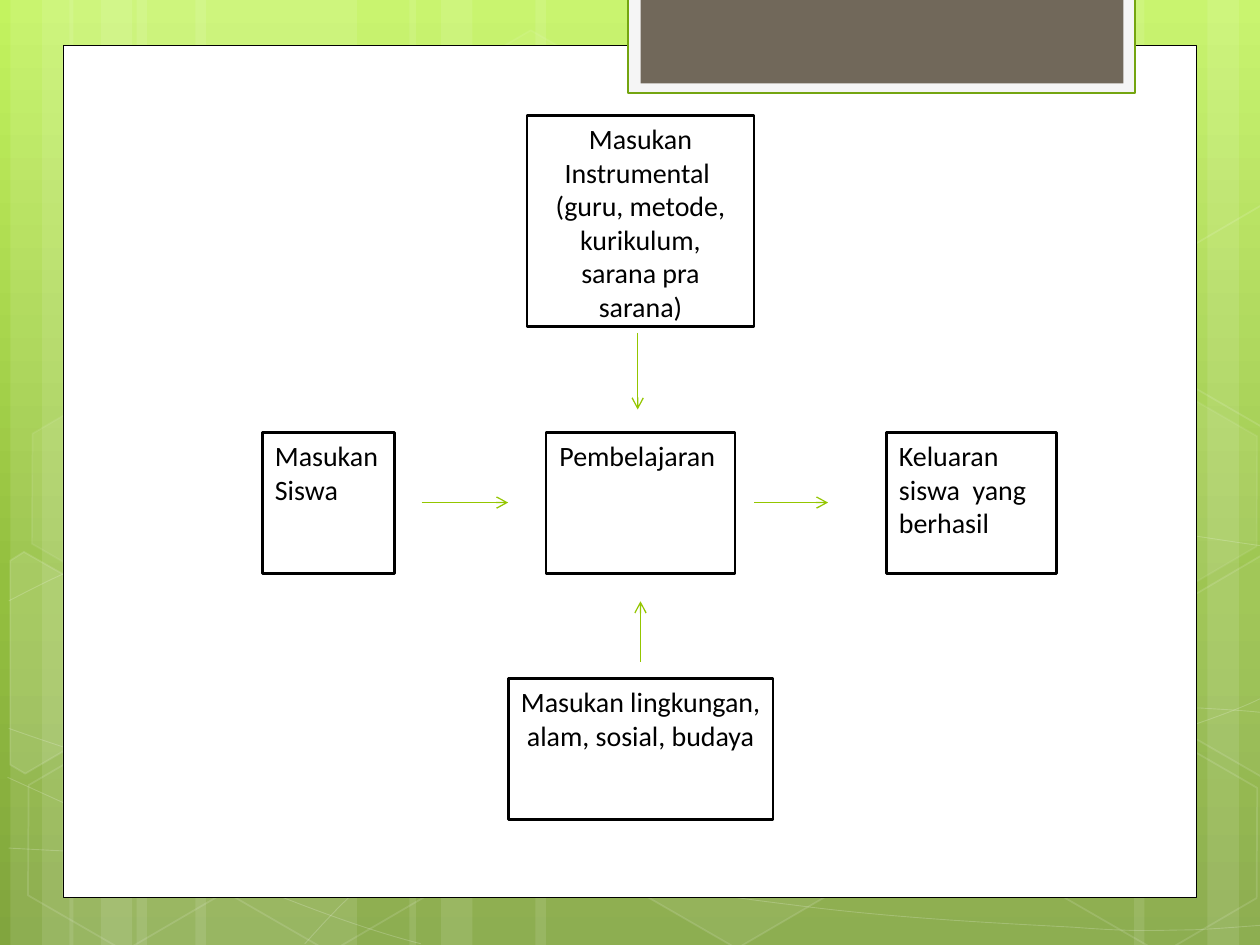
from copy import deepcopy

from pptx import Presentation
from pptx.dml.color import RGBColor
from pptx.enum.shapes import MSO_CONNECTOR, MSO_SHAPE
from pptx.enum.text import MSO_ANCHOR, PP_ALIGN
from pptx.oxml.ns import qn
from pptx.util import Pt

WHITE = RGBColor(0xFF, 0xFF, 0xFF)
BLACK = RGBColor(0x00, 0x00, 0x00)
LIME = RGBColor(0xC3, 0xF3, 0x5F)
LEAF = RGBColor(0x93, 0xBF, 0x3F)
MOSS = RGBColor(0x81, 0xA5, 0x3E)
FRAME_FILL = RGBColor(0xF5, 0xF5, 0xF5)
FRAME_LINE = RGBColor(0x74, 0xA5, 0x10)
BROWN = RGBColor(0x71, 0x68, 0x5A)
ARROW = RGBColor(0x94, 0xC6, 0x00)


def paint(shape, fill=None, line=None, width=1, fill_alpha=100, line_alpha=100):
    """Set fill and outline; the alphas are opacity in percent."""
    shape.shadow.inherit = False
    for part, color, alpha, route in (
        (shape.fill, fill, fill_alpha, "a:solidFill/a:srgbClr"),
        (shape.line.fill, line, line_alpha, "a:ln/a:solidFill/a:srgbClr"),
    ):
        if color is None:
            part.background()
            continue
        part.solid()
        part.fore_color.rgb = color
        if alpha < 100:
            node = shape._element.spPr.xpath(route)[0]
            node.append(node.makeelement(qn("a:alpha"), {"val": str(alpha * 1000)}))
    if line is not None:
        shape.line.width = Pt(width)


def add_box(text, left, top, width, height, align=PP_ALIGN.LEFT, size=16,
            font="Calibri", color=BLACK, inset=7.2):
    box = slide.shapes.add_shape(MSO_SHAPE.RECTANGLE, Pt(left), Pt(top), Pt(width), Pt(height))
    paint(box, WHITE, BLACK, 1.5)
    frame = box.text_frame
    frame.word_wrap = True
    frame.vertical_anchor = MSO_ANCHOR.TOP
    frame.margin_left = frame.margin_right = Pt(inset)
    paragraph = frame.paragraphs[0]
    paragraph.alignment = align
    paragraph.space_after = Pt(10)
    run = paragraph.add_run()
    run.text = text
    run.font.size = Pt(size)
    run.font.name = font
    run.font.color.rgb = color


prs = Presentation()
prs.slide_width, prs.slide_height = Pt(720), Pt(540)
slide = prs.slides.add_slide(prs.slide_layouts[6])

# Background gradient, light at the top
backdrop = slide.background.fill
backdrop.gradient()
backdrop.gradient_angle = 270
first_stop = backdrop.gradient_stops[0]._gs
first_stop.addnext(deepcopy(first_stop))
for stop, color, position in zip(backdrop.gradient_stops, (LIME, LEAF, MOSS), (0, 0.62, 1)):
    stop.color.rgb = color
    stop.position = position

# Pale vertical stripes: left, width
for left, width in (
    (78, 126), (6, 36), (24, 60), (111.6, 126), (39.6, 36), (57.6, 60),
    (528, 126), (690, 36), (648, 60), (306, 222), (234, 36), (252, 60),
):
    stripe = slide.shapes.add_shape(MSO_SHAPE.RECTANGLE, Pt(left), 0, Pt(width), Pt(540))
    paint(stripe, WHITE, fill_alpha=10)

# Thin curves: a start point, then three Bezier points for each segment
CURVES = (
    ((5, 484.6), (43.9, 486.7), (82.8, 488.9), (136.8, 488.2), (190.8, 487.4), (257.8, 486),
     (329.8, 478.8), (401.8, 471.6), (504, 457.9), (570.2, 444.2), (636, 430.6), (703.4, 409),
     (725, 396.7)),
    ((5, 343.4), (25.9, 332.6), (46.8, 321.1), (87.1, 310.3), (128.2, 299.5), (186.5, 283.7),
     (249.8, 278.6), (313.9, 273.6), (391.7, 272.9), (470.9, 278.6), (550.1, 284.4),
     (681.8, 306.7), (725, 312.5)),
    ((4.3, 444.2), (91.4, 483.8), (177.8, 523.4), (240.5, 539.3)),
    ((5, 416.2), (27.4, 424.1), (50.4, 432), (92.2, 443.5), (133.9, 454.3), (196.6, 472.3),
     (257, 484.6), (316.8, 496.8), (392.4, 509.8), (452.2, 517), (511.9, 524.9), (576, 527.8),
     (614.2, 529.9), (651.6, 532.8), (661.7, 531.4), (680.4, 531.4), (699.1, 530.6),
     (712.1, 529.2), (725, 528.5)),
    ((174.2, 539.3), (187.2, 524.9), (200.2, 510.5), (217.4, 497.5), (234.7, 484.6),
     (259.2, 470.2), (279.4, 460.1), (299.5, 450), (311.8, 445.7), (338.4, 438.5),
     (364.3, 431.3), (412.6, 421.2), (437.8, 416.2), (463.7, 411.1), (467.3, 411.1),
     (489.6, 409.7), (511.9, 407.5), (547.2, 405.4), (571.7, 404.6), (596.9, 403.9),
     (637.9, 404.6), (637.9, 404.6), (654, 404.6), (670, 404.6), (686.2, 404.6),
     (699.1, 405.4), (711.4, 406.1), (717.8, 406.8), (724.3, 407.5), (722.2, 406.8),
     (724.3, 407.5)),
)
for curve in CURVES:
    start, *controls = [(Pt(x), Pt(y)) for x, y in curve]
    builder = slide.shapes.build_freeform(*start)
    builder.add_line_segments(controls, close=False)
    wave = builder.convert_to_shape()
    # Join every three straight segments into one Bezier segment
    segments = wave._element.spPr.xpath(".//a:lnTo")
    for i in range(0, len(segments), 3):
        bezier = segments[i].makeelement(qn("a:cubicBezTo"))
        segments[i].addprevious(bezier)
        for segment in segments[i:i + 3]:
            bezier.append(segment[0])
            segment.getparent().remove(segment)
    paint(wave, line=WHITE, width=0.5, line_alpha=20)

# Whole hexagons: left, top, fill opacity, line opacity
for left, top, fill_alpha, line_alpha in (
    (240.5, 25.9, 4, 8), (357.8, 424.1, 6, 12), (7.9, 425.5, 0, 12), (10.1, 224.6, 7, 8),
    (125.3, 426.2, 0, 12), (542.2, 326.2, 10, 12), (600.5, 427, 0, 12), (600.5, 226.1, 7, 8),
):
    hexagon = slide.shapes.add_shape(MSO_SHAPE.HEXAGON, Pt(left), Pt(top), Pt(126), Pt(109.4))
    hexagon.adjustments[0] = 0.285
    hexagon.rotation = 30
    paint(hexagon, WHITE if fill_alpha else None, WHITE, 1, fill_alpha, line_alpha)

# Hexagons cut off by the slide edge: fill opacity, corners
for fill_alpha, corners in (
    (10, ((5.8, 320.4), (13.7, 315.4), (69.1, 347), (68.4, 410.4), (14.4, 442.1), (5.8, 437))),
    (4, ((666.7, 349.2), (720.7, 317.5), (726.5, 321.1), (726.5, 441.4), (721.4, 444.2),
         (666.7, 412.6))),
    (0, ((666.7, 149), (720.7, 117.4), (727.2, 121), (726.5, 241.2), (721.4, 244.1),
         (666.7, 212.4))),
):
    outline = [(Pt(x), Pt(y)) for x, y in corners]
    builder = slide.shapes.build_freeform(*outline[0])
    builder.add_line_segments(outline[1:], close=True)
    paint(builder.convert_to_shape(), WHITE if fill_alpha else None, WHITE, 1, fill_alpha, 12)

# White panel and the brown tab at its top
for left, top, width, height, fill, line, line_width in (
    (36, 25.9, 648, 487, WHITE, BLACK, 0.5),
    (359, -1.4, 289.6, 54.7, FRAME_FILL, FRAME_LINE, 1.25),
    (366, -1.4, 276, 49, BROWN, None, 0),
):
    panel = slide.shapes.add_shape(MSO_SHAPE.RECTANGLE, Pt(left), Pt(top), Pt(width), Pt(height))
    paint(panel, fill, line, line_width)

# Learning process: input, process and output
ROW_TOP, BOX_HEIGHT = 247, 80.6
add_box("Masukan Siswa", 150, ROW_TOP, 75.6, BOX_HEIGHT)
add_box("Keluaran siswa  yang berhasil", 506.6, ROW_TOP, 97.2, BOX_HEIGHT)
add_box("Pembelajaran ", 312, ROW_TOP, 108, BOX_HEIGHT, align=PP_ALIGN.CENTER)
add_box("Masukan lingkungan, alam, sosial, budaya", 290.5, 387.8, 151.2, BOX_HEIGHT,
        align=PP_ALIGN.CENTER)
add_box("Masukan Instrumental  (guru, metode, kurikulum, sarana pra sarana)",
        301.2, 66, 129.6, 120.8, align=PP_ALIGN.CENTER, inset=8)

for start_x, start_y, end_x, end_y in (
    (366, 378, 366, 343.6), (364.4, 190.2, 364.4, 234),
    (241, 287.2, 290.4, 287.2), (431, 287.2, 473.2, 287.2),
):
    arrow = slide.shapes.add_connector(MSO_CONNECTOR.STRAIGHT, Pt(start_x), Pt(start_y),
                                       Pt(end_x), Pt(end_y))
    arrow.line.color.rgb = ARROW
    arrow.line.width = Pt(0.75)
    stroke = arrow.line._get_or_add_ln()
    stroke.append(stroke.makeelement(qn("a:tailEnd"), {"type": "arrow"}))
    properties = arrow._element.spPr
    properties.append(properties.makeelement(qn("a:effectLst")))

prs.save("out.pptx")
